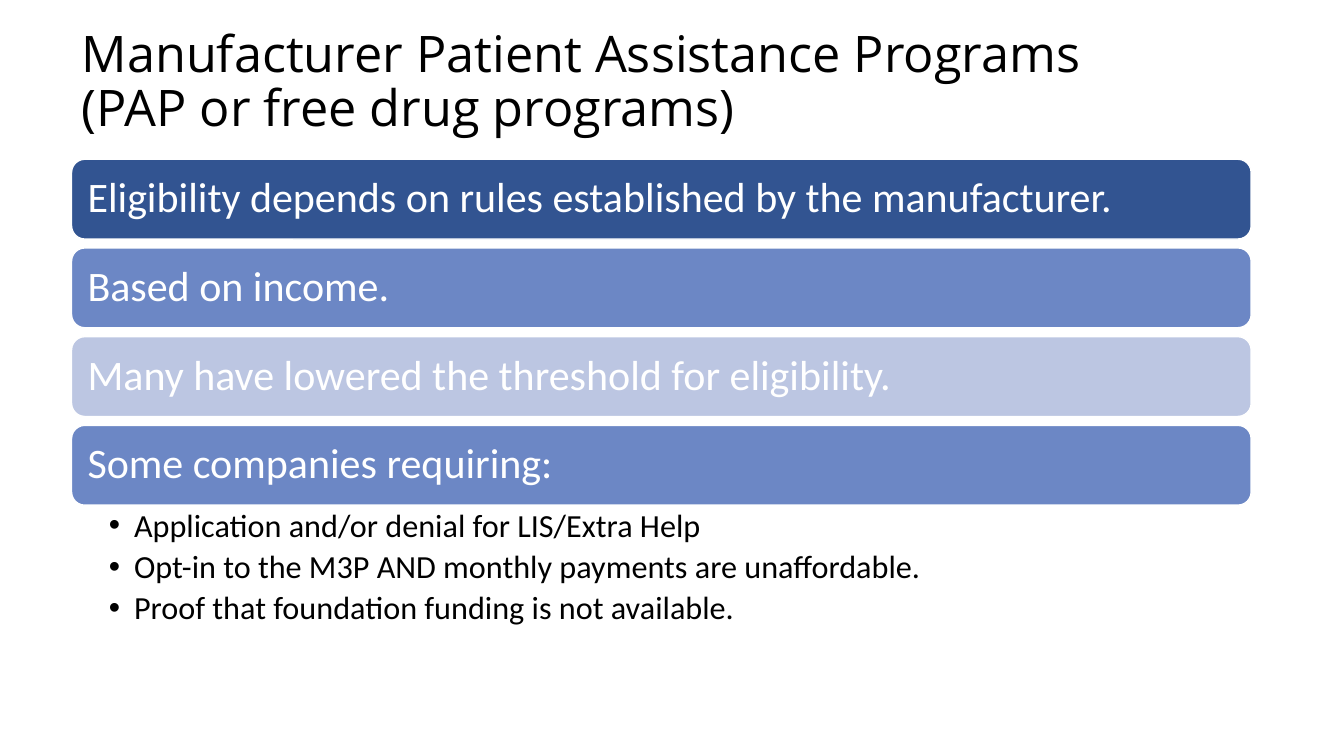
from dataclasses import dataclass

from lxml import etree
from pptx import Presentation
from pptx.dml.color import RGBColor
from pptx.enum.shapes import MSO_SHAPE
from pptx.enum.text import MSO_ANCHOR, MSO_AUTO_SIZE, PP_ALIGN
from pptx.oxml.ns import qn
from pptx.util import Inches, Pt

ROUNDED = MSO_SHAPE.ROUNDED_RECTANGLE
MIDDLE, TOP = MSO_ANCHOR.MIDDLE, MSO_ANCHOR.TOP
LEFT = PP_ALIGN.LEFT
NO_AUTOFIT = MSO_AUTO_SIZE.NONE


@dataclass(frozen=True)
class Theme:
    """Colours, fonts, type sizes and grid measures of the slide."""
    black: str = "000000"
    white: str = "FFFFFF"
    navy: str = "325491"
    blue: str = "6C87C5"
    pale: str = "BCC6E2"
    title_font: str = "Open Sans"
    body_font: str = "Calibri"
    title_size: int = 36
    bar_size: int = 30
    bullet_size: int = 23
    line_spacing: float = 0.9
    bullet_gap: float = 4.6
    grid_left: float = 0.71
    grid_top: float = 1.58
    grid_width: float = 11.7
    row_height: float = 0.88


class SlideBuilder:
    """Draws full-width elements on the rows of one slide grid."""

    def __init__(self, slide, theme):
        self.slide = slide
        self.theme = theme

    def box(self, row, rows):
        """Return left, top, width and height of a span of rows."""
        theme = self.theme
        return (Inches(theme.grid_left),
                Inches(theme.grid_top + row * theme.row_height),
                Inches(theme.grid_width),
                Inches(rows * theme.row_height))

    def frame(self, shape, anchor, insets):
        """Set up a shape's text frame with left, top, right, bottom insets."""
        frame = shape.text_frame
        frame.word_wrap = True
        frame.auto_size = NO_AUTOFIT
        frame.vertical_anchor = anchor
        (frame.margin_left, frame.margin_top,
         frame.margin_right, frame.margin_bottom) = map(Inches, insets)
        return frame

    def add_text(self, paragraph, text, font, size, color):
        """Add one styled run to a paragraph."""
        paragraph.alignment = LEFT
        paragraph.line_spacing = self.theme.line_spacing
        run = paragraph.add_run()
        run.text = text
        run.font.name = font
        run.font.size = Pt(size)
        run.font.color.rgb = RGBColor.from_string(color)

    def title(self, lines, row, rows):
        """Place the title placeholder and fill it line by line."""
        theme = self.theme
        shape = self.slide.shapes.title
        shape.left, shape.top, shape.width, shape.height = self.box(row, rows)
        frame = self.frame(shape, MIDDLE, (0.1, 0.05, 0.1, 0.05))
        paragraph = frame.paragraphs[0]
        for number, line in enumerate(lines):
            if number:
                paragraph.add_line_break()
            self.add_text(paragraph, line, theme.title_font,
                          theme.title_size, theme.black)

    def bar(self, text, fill, row, rows):
        """Draw a rounded bar holding one statement."""
        theme = self.theme
        shape = self.slide.shapes.add_shape(ROUNDED, *self.box(row, rows))
        shape.shadow.inherit = False
        shape.fill.solid()
        shape.fill.fore_color.rgb = RGBColor.from_string(fill)
        shape.line.color.rgb = RGBColor.from_string(theme.white)
        shape.line.width = Pt(1)
        frame = self.frame(shape, MIDDLE, (0.12, 0.12, 0.12, 0.12))
        self.add_text(frame.paragraphs[0], text, theme.body_font,
                      theme.bar_size, theme.white)

    def bullets(self, items, row, rows):
        """Add a bulleted list below a bar."""
        theme = self.theme
        shape = self.slide.shapes.add_textbox(*self.box(row, rows))
        frame = self.frame(shape, TOP, (0.37, 0.04, 0.23, 0.04))
        for number, item in enumerate(items):
            paragraph = frame.add_paragraph() if number else frame.paragraphs[0]
            paragraph.level = 1
            self.add_text(paragraph, item, theme.body_font,
                          theme.bullet_size, theme.black)
            paragraph.space_after = Pt(theme.bullet_gap)
            properties = paragraph._p.get_or_add_pPr()
            properties.set("marL", str(Inches(0.25)))
            properties.set("indent", str(Inches(-0.25)))
            etree.SubElement(properties, qn("a:buFont")).set("typeface", "Arial")
            etree.SubElement(properties, qn("a:buChar")).set("char", "•")


def main():
    """Build the slide and save it."""
    presentation = Presentation()
    presentation.slide_width = Inches(13.33)
    presentation.slide_height = Inches(7.5)
    theme = Theme()
    slide = presentation.slides.add_slide(presentation.slide_layouts[5])
    builder = SlideBuilder(slide, theme)

    builder.title(["Manufacturer Patient Assistance Programs",
                   "(PAP or free drug programs)"], row=-1.68, rows=1.65)
    statements = [
        ("Eligibility depends on rules established by the manufacturer.", theme.navy),
        ("Based on income.", theme.blue),
        ("Many have lowered the threshold for eligibility.", theme.pale),
        ("Some companies requiring:", theme.blue),
    ]
    for row, (text, fill) in enumerate(statements):
        builder.bar(text, fill, row, rows=0.9)
    builder.bullets(["Application and/or denial for LIS/Extra Help",
                     "Opt-in to the M3P AND monthly payments are unaffordable.",
                     "Proof that foundation funding is not available."],
                    row=3.9, rows=1.5)

    presentation.save("out.pptx")


if __name__ == "__main__":
    main()
